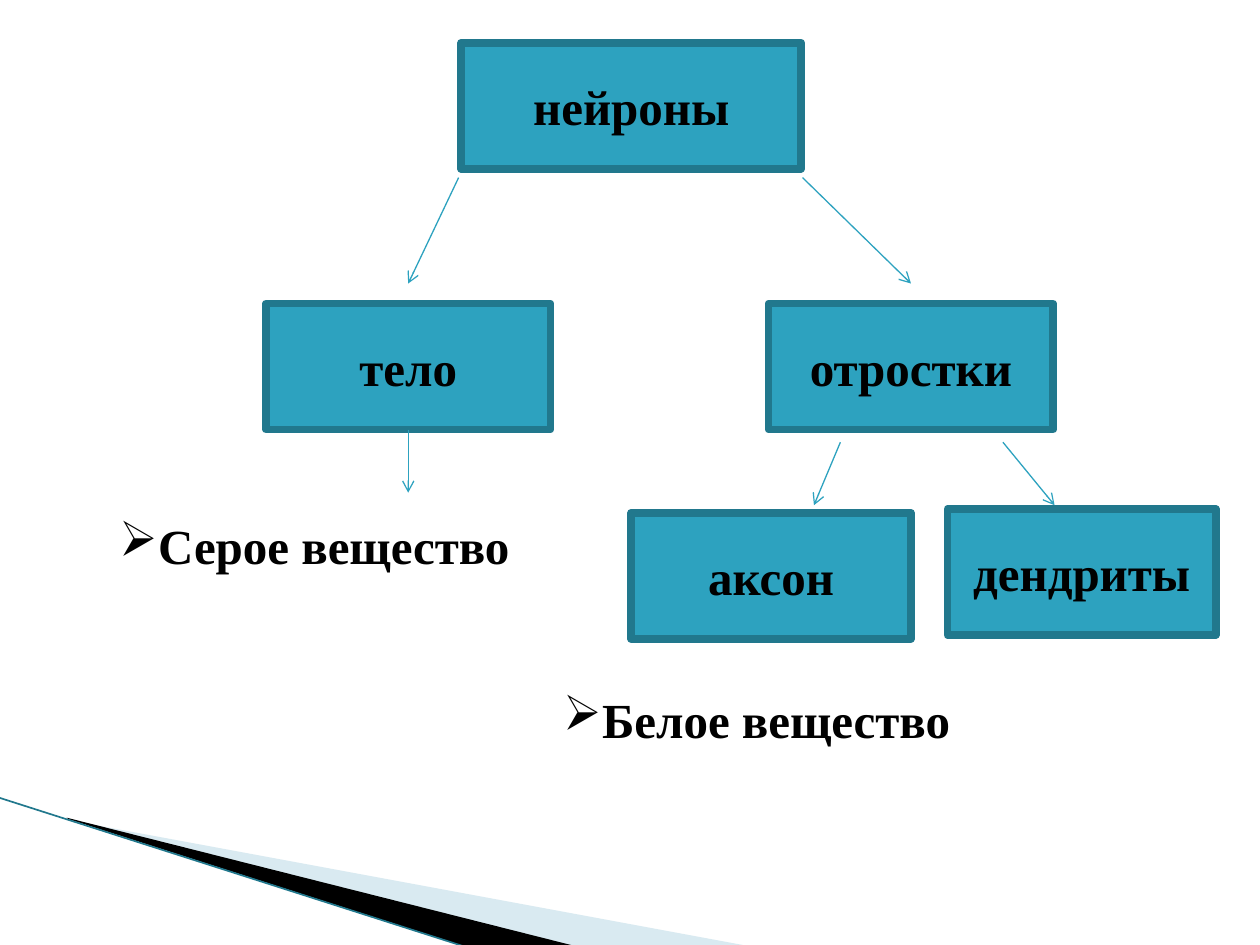
from dataclasses import dataclass

from lxml import etree
from pptx import Presentation
from pptx.dml.color import RGBColor
from pptx.enum.shapes import MSO_CONNECTOR, MSO_SHAPE
from pptx.enum.text import MSO_ANCHOR, MSO_AUTO_SIZE, PP_ALIGN
from pptx.oxml.ns import qn
from pptx.util import Inches, Pt

RECT = MSO_SHAPE.RECTANGLE
STRAIGHT = MSO_CONNECTOR.STRAIGHT
LEFT, CENTER = PP_ALIGN.LEFT, PP_ALIGN.CENTER
MIDDLE = MSO_ANCHOR.MIDDLE
GROW = MSO_AUTO_SIZE.SHAPE_TO_FIT_TEXT

WIDTH, HEIGHT = Inches(10), Inches(7.5)
COLS, ROWS = 100, 75
BOX_ROWS = 10


@dataclass(frozen=True)
class Theme:
    font: str = "Times New Roman"
    size: float = 28
    ink: str = "000000"
    box: str = "2DA2BF"
    edge: str = "21788D"
    pale: str = "A0CBDC"
    edge_width: float = 4.33
    arrow_width: float = 0.75
    corner_width: float = 0.95


THEME = Theme()


def col(n):
    return round(WIDTH * n / COLS)


def row(n):
    return round(HEIGHT * n / ROWS)


def rgb(value):
    return RGBColor.from_string(value)


def add_text(tf, text, align=LEFT, bullet=None, color=THEME.ink, size=THEME.size):
    p = tf.paragraphs[0]
    p.alignment = align
    if bullet:
        pPr = p._p.get_or_add_pPr()
        pPr.set("marL", str(Inches(0.31)))
        pPr.set("indent", str(-Inches(0.31)))
        etree.SubElement(pPr, qn("a:buChar")).set("char", bullet)
    r = p.add_run()
    r.text = text
    r.font.name = THEME.font
    r.font.size = Pt(size)
    r.font.bold = True
    r.font.color.rgb = rgb(color)


def add_box(s, text, x, y, w):
    sp = s.shapes.add_shape(RECT, col(x), row(y), col(w), row(BOX_ROWS))
    sp.shadow.inherit = False
    sp.fill.solid()
    sp.fill.fore_color.rgb = rgb(THEME.box)
    sp.line.color.rgb = rgb(THEME.edge)
    sp.line.width = Pt(THEME.edge_width)
    sp.text_frame.word_wrap = True
    sp.text_frame.vertical_anchor = MIDDLE
    add_text(sp.text_frame, text, align=CENTER)


def add_label(s, text, x, y, w, align=LEFT):
    tf = s.shapes.add_textbox(col(x), row(y), col(w), row(5.7)).text_frame
    tf.word_wrap = False
    tf.auto_size = GROW
    add_text(tf, text, align=align, bullet="➢")


def add_line(s, x1, y1, x2, y2, color=THEME.box, width=THEME.arrow_width, head="arrow"):
    sp = s.shapes.add_connector(STRAIGHT, col(x1), row(y1), col(x2), row(y2))
    sp.line.color.rgb = rgb(color)
    sp.line.width = Pt(width)
    if head:
        etree.SubElement(sp.line._get_or_add_ln(), qn("a:tailEnd")).set("type", head)
    etree.SubElement(sp._element.spPr, qn("a:effectLst"))


def add_wedge(s, points, color, alpha=100):
    start, *rest = [(col(x), row(y)) for x, y in points]
    fb = s.shapes.build_freeform(*start)
    fb.add_line_segments(rest, close=True)
    sp = fb.convert_to_shape()
    sp.shadow.inherit = False
    sp.line.fill.background()
    sp.fill.solid()
    sp.fill.fore_color.rgb = rgb(color)
    if alpha < 100:
        clr = sp.fill._xPr.find(qn("a:solidFill"))[0]
        etree.SubElement(clr, qn("a:alpha")).set("val", str(alpha * 1000))


def add_corner(s):
    add_wedge(s, [(5.5, 65.1), (59.5, 75.1), (45.6, 75.1), (5.5, 65)], THEME.pale, alpha=40)
    add_wedge(s, [(5.3, 64.9), (45.7, 75.1), (37.2, 75.2), (5.4, 65)], THEME.ink)
    add_line(s, -0.1, 63.3, 37.1, 75.2, THEME.edge, THEME.corner_width, head=None)


def main():
    prs = Presentation()
    prs.slide_width, prs.slide_height = WIDTH, HEIGHT
    s = prs.slides.add_slide(prs.slide_layouts[6])
    add_corner(s)
    boxes = [
        ("нейроны", 36.6, 3.4, 27),
        ("тело", 21.1, 24.1, 22.6),
        ("отростки", 61, 24.1, 22.6),
        ("аксон", 50.1, 40.7, 22.2),
        ("дендриты", 75.2, 40.4, 21.3),
    ]
    for box in boxes:
        add_box(s, *box)
    arrows = [
        (36.4, 14.1, 32.4, 22.5),
        (63.7, 14.1, 72.3, 22.5),
        (32.4, 34.1, 32.4, 39.1),
        (66.7, 35.1, 64.6, 40.1),
        (79.6, 35.1, 83.7, 40.1),
    ]
    for arrow in arrows:
        add_line(s, *arrow)
    add_label(s, "Серое вещество", 8.3, 40.4, 33.3, align=CENTER)
    add_label(s, "Белое вещество", 43.7, 54.2, 33.1)
    prs.save("out.pptx")


if __name__ == "__main__":
    main()
